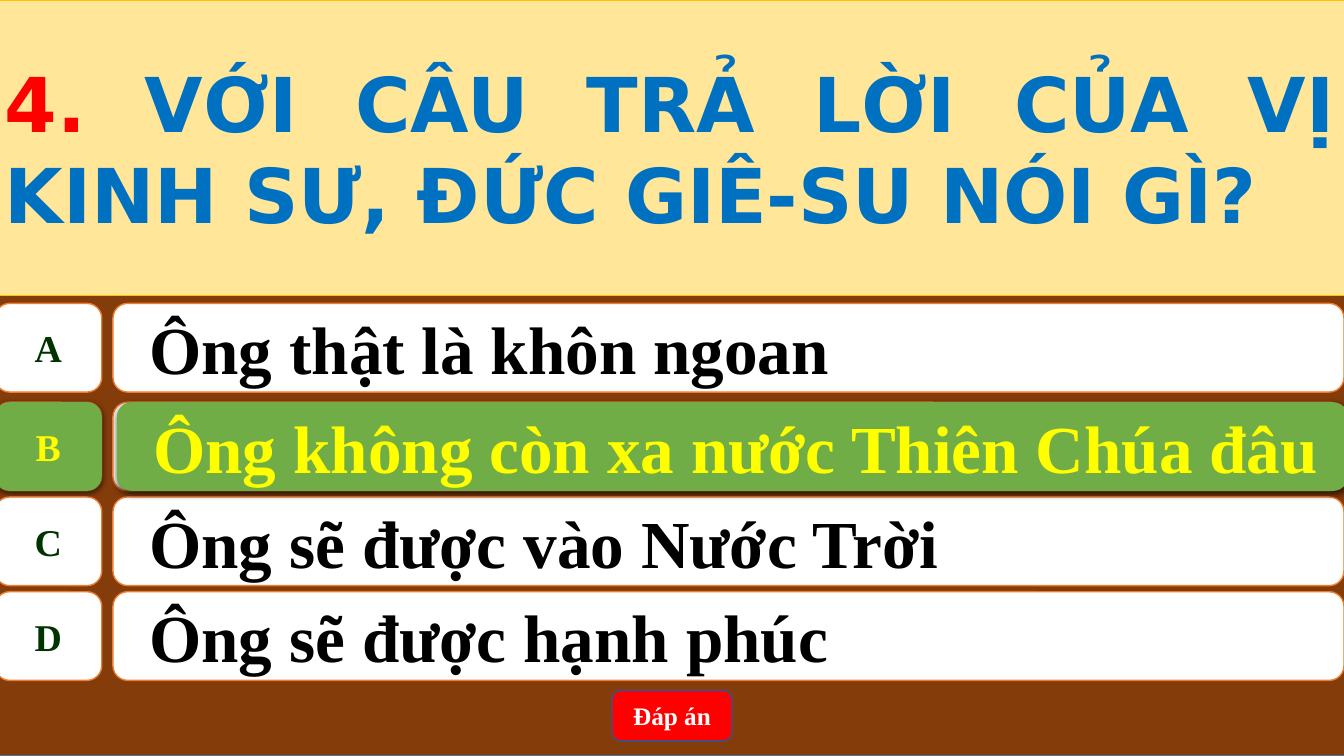
from lxml.etree import SubElement
from pptx import Presentation
from pptx.dml.color import RGBColor
from pptx.enum.shapes import MSO_SHAPE
from pptx.enum.text import MSO_ANCHOR, PP_ALIGN
from pptx.oxml.ns import qn
from pptx.util import Inches, Pt

WIDTH, HEIGHT = 13.33, 7.5
LEFT = -0.05
FULL_WIDTH = 13.39
LETTER_WIDTH = 1.06
ANSWER_LEFT, ANSWER_WIDTH = 1.12, 12.21
ROW_HEIGHT = 0.88
SERIF = "Times New Roman"
ROWS = [
    (3.01, "A", "Ông thật là khôn ngoan"),
    (3.99, "B", "Ông không còn xa nước Thiên Chúa đâu"),
    (4.93, "C", "Ông sẽ được vào Nước Trời"),
    (5.87, "D", "Ông sẽ được hạnh phúc"),
]


def color(value):
    return RGBColor.from_string(value)


def add_box(shapes, kind, box, fill, line=None, line_width=1):
    shape = shapes.add_shape(kind, *(Inches(length) for length in box))
    shape.shadow.inherit = False
    shape.fill.solid()
    shape.fill.fore_color.rgb = color(fill)
    if line:
        shape.line.color.rgb = color(line)
        shape.line.width = Pt(line_width)
    else:
        shape.line.fill.background()
    return shape


def write(shape, runs, size, font=SERIF, align=PP_ALIGN.CENTER, wrap=True):
    frame = shape.text_frame
    frame.word_wrap = wrap
    frame.vertical_anchor = MSO_ANCHOR.MIDDLE
    paragraph = frame.paragraphs[0]
    paragraph.alignment = align
    for text, value in runs:
        run = paragraph.add_run()
        run.text = text
        run.font.size = Pt(size)
        run.font.name = font
        run.font.bold = True
        run.font.color.rgb = color(value)
    return paragraph


def add_shadow(shape):
    effects = shape._element.spPr.find(qn("a:effectLst"))
    shadow = SubElement(effects, qn("a:outerShdw"), blurRad=str(Pt(4.5)),
                        dist=str(Pt(1.5)), dir="5400000", rotWithShape="0")
    black = SubElement(shadow, qn("a:srgbClr"), val="000000")
    SubElement(black, qn("a:alpha"), val="63000")


def add_answer_row(slide, top, letter, answer, correct=False):
    fill, line = ("70AD47", None) if correct else ("FFFFFF", "ED7D31")
    letter_color, answer_color = ("FFFF00", "FFFF00") if correct else ("003300", "000000")
    answer_left = ANSWER_LEFT + (0.04 if correct else 0)
    shapes = slide.shapes.add_group_shape().shapes

    letter_box = add_box(shapes, MSO_SHAPE.FLOWCHART_ALTERNATE_PROCESS,
                         (LEFT, top, LETTER_WIDTH, ROW_HEIGHT), fill, line)
    write(letter_box, [(letter, letter_color)], 27, wrap=False)

    answer_box = add_box(shapes, MSO_SHAPE.ROUNDED_RECTANGLE,
                         (answer_left, top, ANSWER_WIDTH, ROW_HEIGHT), fill, line)
    paragraph = write(answer_box, [(answer, answer_color)], 48, align=PP_ALIGN.LEFT)
    paragraph.level = 1
    properties = paragraph._p.get_or_add_pPr()
    properties.set("marL", str(Inches(0.5)))
    properties.set("indent", str(Inches(-0.28)))

    if correct:
        add_shadow(letter_box)
        add_shadow(answer_box)


def add_question(slide, box):
    panel = add_box(slide.shapes, MSO_SHAPE.RECTANGLE, box, "FFE699", "FFC000", 0.5)
    runs = [("4. ", "FF0000"),
            ("VỚI CÂU TRẢ LỜI CỦA VỊ KINH SƯ, ĐỨC GIÊ-SU NÓI GÌ?", "0070C0")]
    write(panel, runs, 54, "DejaVu Sans", PP_ALIGN.JUSTIFY)


def add_answer_button(slide, box):
    button = add_box(slide.shapes, MSO_SHAPE.ROUNDED_RECTANGLE, box, "FF0000", "325491")
    write(button, [("Đáp án", "FFFFFF")], 18)


def main():
    presentation = Presentation()
    presentation.slide_width = Inches(WIDTH)
    presentation.slide_height = Inches(HEIGHT)
    slide = presentation.slides.add_slide(presentation.slide_layouts[6])

    add_box(slide.shapes, MSO_SHAPE.RECTANGLE, (LEFT, 0, FULL_WIDTH, HEIGHT),
            "843C0B", "43739E")
    for row in ROWS:
        add_answer_row(slide, *row)
    add_answer_button(slide, (6.07, 6.85, 1.19, 0.5))
    add_answer_row(slide, *ROWS[1], correct=True)
    add_question(slide, (LEFT, 0, FULL_WIDTH, 2.93))
    presentation.save("out.pptx")


if __name__ == "__main__":
    main()
